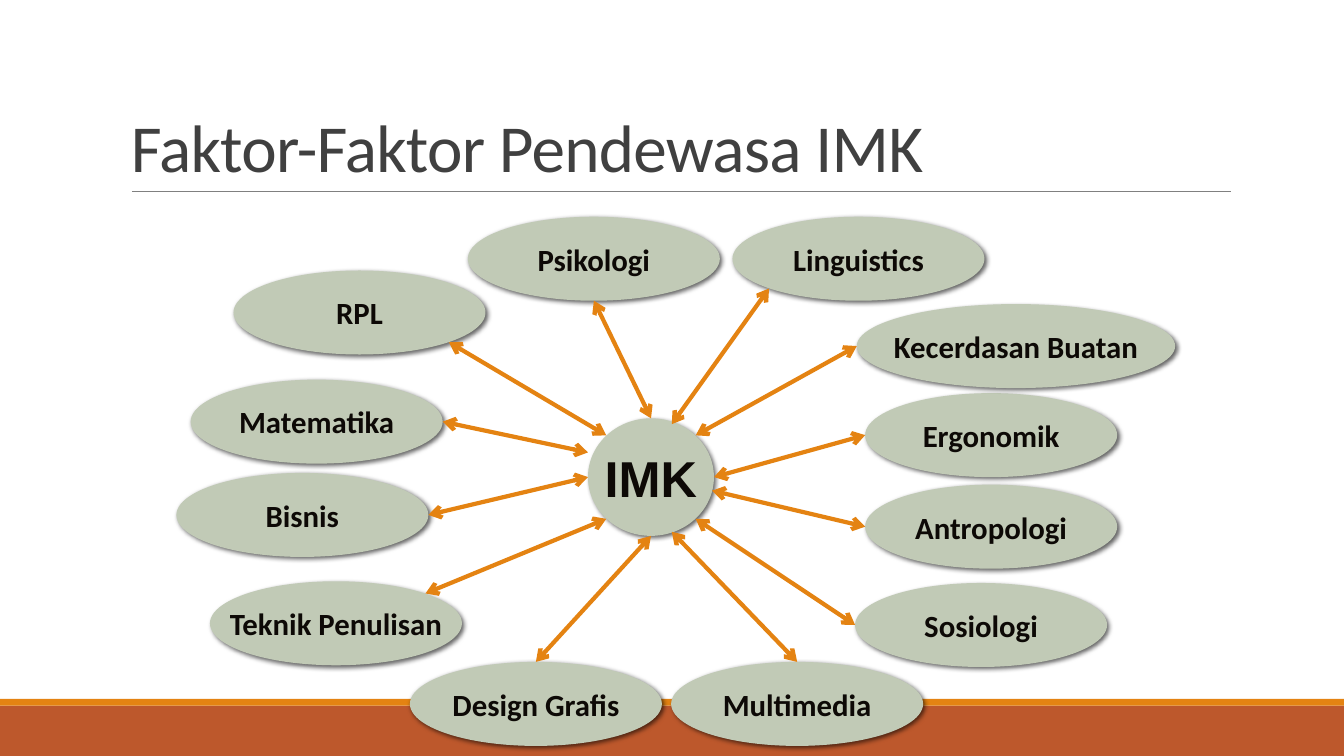
from lxml.etree import SubElement
from pptx import Presentation
from pptx.dml.color import RGBColor
from pptx.enum.shapes import MSO_CONNECTOR, MSO_SHAPE
from pptx.enum.text import MSO_ANCHOR, PP_ALIGN
from pptx.oxml.ns import qn
from pptx.util import Inches, Pt

COLS, ROWS = 16, 9
INK = {"title": "404040", "text": "0D0906", "node": "C1CAB6", "arrow": "E48312",
       "base": "BD582C", "rule": "808080", "shade": "000000"}
FONTS = {
    "title": {"name": "Calibri", "size": Pt(48), "bold": False},
    "hub": {"name": "Arial", "size": Pt(36), "bold": True},
    "topic": {"name": "Calibri", "size": Pt(22), "bold": True},
}
# Points on an oval, in half widths and half heights from its centre.
D = 0.71
N, S, W, E = (0, -1), (0, 1), (-1, 0), (1, 0)
NW, NE, SW, SE = (-D, -D), (D, -D), (-D, D), (D, D)

HUB = (7, 4.98, 1.5, 1.4)
# Topic, column, row, width, end at the hub, end at the topic
TOPICS = [
    ("RPL", 2.78, 3.22, 3, NW, SE),
    ("Antropologi", 10.3, 5.77, 3, (0.97, 0.23), W),
    ("Matematika", 2.27, 4.52, 3, (-1, -0.42), E),
    ("Bisnis", 2.1, 5.63, 3, W, E),
    ("Teknik Penulisan", 2.5, 6.92, 3, SW, NE),
    ("Psikologi", 5.57, 2.58, 3, N, S),
    ("Design Grafis", 4.88, 7.88, 3, S, N),
    ("Multimedia", 7.99, 7.88, 3, (0.33, 0.93), N),
    ("Sosiologi", 10.18, 6.94, 3, SE, W),
    ("Ergonomik", 10.3, 4.68, 3, E, W),
    ("Kecerdasan Buatan", 10.2, 3.62, 3.79, NE, W),
    ("Linguistics", 8.72, 2.58, 3, (0.33, -0.9), SW),
]


def rgb(key):
    return RGBColor.from_string(INK[key])


def spot(box, site):
    """Grid point at a site on the oval inside box."""
    x, y, w, h = box
    return x + w / 2 * (1 + site[0]), y + h / 2 * (1 + site[1])


class Board:
    def __init__(self, deck):
        self.unit_x = deck.slide_width / COLS
        self.unit_y = deck.slide_height / ROWS
        self.shapes = deck.slides.add_slide(deck.slide_layouts[6]).shapes

    def place(self, *grid):
        units = (self.unit_x, self.unit_y) * 2
        return [round(n * unit) for n, unit in zip(grid, units)]

    def block(self, kind, box, fill):
        shape = self.shapes.add_shape(kind, *self.place(*box))
        shape.shadow.inherit = False
        shape.fill.solid()
        shape.fill.fore_color.rgb = rgb(fill)
        shape.line.fill.background()
        return shape

    def label(self, shape, text, style, ink, frame, para):
        body = shape.text_frame
        line = body.paragraphs[0]
        run = line.add_run()
        run.text = text
        for part, values in ((body, frame), (line, para), (run.font, FONTS[style])):
            for name, value in values.items():
                setattr(part, name, value)
        run.font.color.rgb = rgb(ink)
        return run

    def title(self, text, box):
        shape = self.shapes.add_textbox(*self.place(*box))
        run = self.label(shape, text, "title", "title",
                         {"word_wrap": True, "vertical_anchor": MSO_ANCHOR.BOTTOM},
                         {"line_spacing": 0.85})
        run._r.get_or_add_rPr().set("spc", "-50")

    def oval(self, text, box, style):
        shape = self.block(MSO_SHAPE.OVAL, box, "node")
        self.shade(shape)
        self.label(shape, text, style, "text",
                   {"word_wrap": False, "vertical_anchor": MSO_ANCHOR.MIDDLE},
                   {"alignment": PP_ALIGN.CENTER})

    def shade(self, shape):
        """Cast a soft shadow to the lower right."""
        effects = shape._element.spPr.find(qn("a:effectLst"))
        outer = SubElement(effects, qn("a:outerShdw"), blurRad=str(Pt(3.5)),
                           dist=str(Pt(2)), dir="2700000", algn="ctr", rotWithShape="0")
        color = SubElement(outer, qn("a:srgbClr"), val=INK["shade"])
        SubElement(color, qn("a:alpha"), val="60000")

    def line(self, start, end, ink, width, heads=()):
        link = self.shapes.add_connector(MSO_CONNECTOR.STRAIGHT, *self.place(*start, *end))
        link.line.color.rgb = rgb(ink)
        link.line.width = Pt(width)
        for head in heads:
            SubElement(link.line._get_or_add_ln(), qn(head), type="arrow")
        SubElement(link._element.spPr, qn("a:effectLst"))


def main():
    deck = Presentation()
    deck.slide_width, deck.slide_height = Inches(13.33), Inches(7.5)
    board = Board(deck)
    board.block(MSO_SHAPE.RECTANGLE, (0, 8.4, COLS, 0.6), "base")
    board.block(MSO_SHAPE.RECTANGLE, (0, 8.32, COLS, 0.08), "arrow")
    board.line((1.57, 2.28), (14.65, 2.28), "rule", 0.5)
    board.title("Faktor-Faktor Pendewasa IMK", (1.44, 0.37, 13.2, 1.91))
    board.oval("IMK", HUB, "hub")
    for text, col, row, width, *_ in TOPICS:
        board.oval(text, (col, row, width, 1), "topic")
    for _, col, row, width, near, far in TOPICS:
        board.line(spot(HUB, near), spot((col, row, width, 1), far),
                   "arrow", 3, ("a:headEnd", "a:tailEnd"))
    deck.save("out.pptx")


if __name__ == "__main__":
    main()
